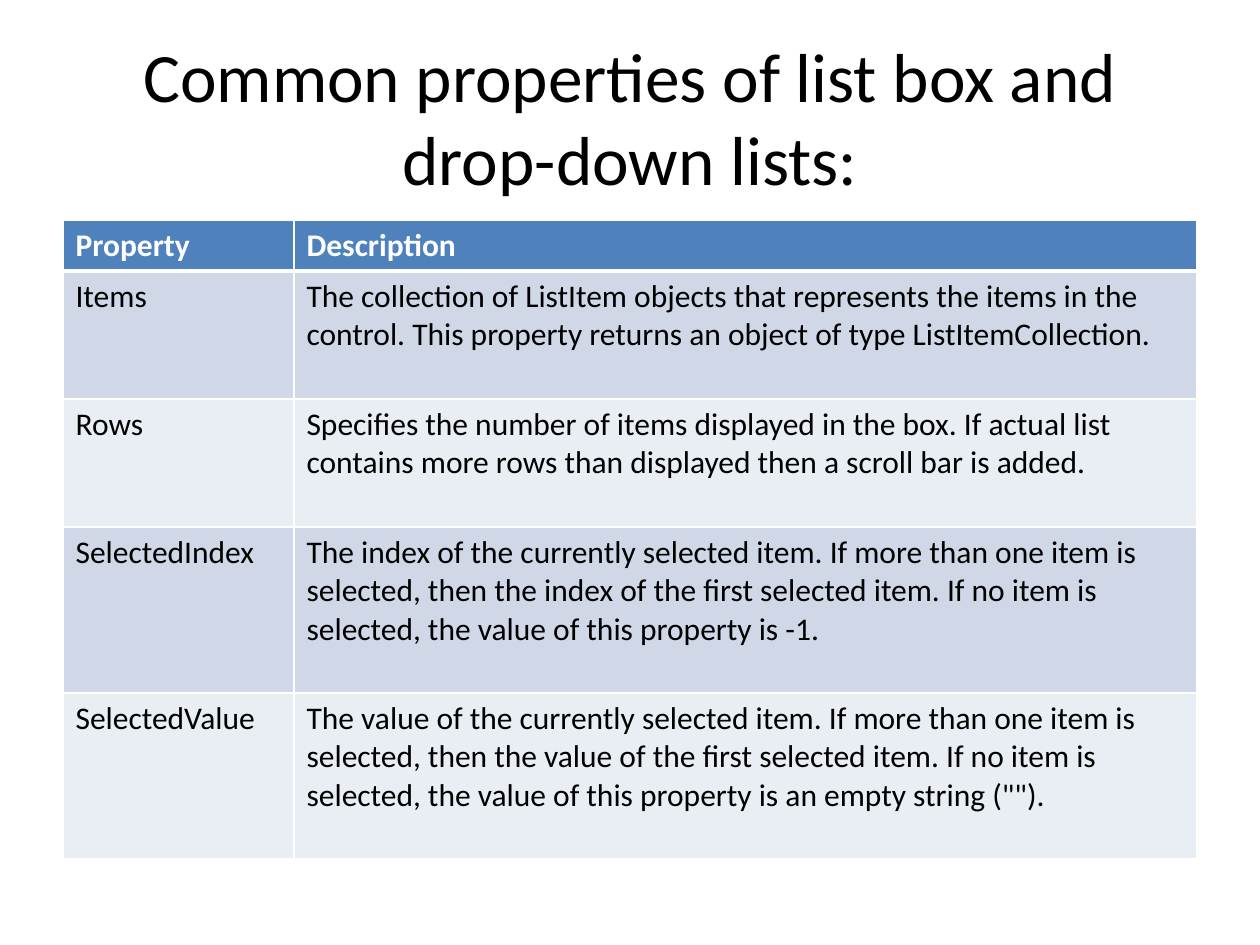
from lxml import etree
from pptx import Presentation
from pptx.dml.color import RGBColor
from pptx.enum.text import MSO_ANCHOR as ANCHOR, PP_ALIGN as ALIGN
from pptx.oxml.ns import qn
from pptx.util import Emu, Pt

SCALE = 914400 // 126


def px(n):
    return Emu(n * SCALE)


def rgb(value):
    return RGBColor.from_string(value)


class Deck:
    font = "Calibri"
    black, white, header = "000000", "FFFFFF", "4F81BD"
    bands = ("D0D8E8", "E9EDF4")

    def __init__(self, width, height):
        self.prs = Presentation()
        self.prs.slide_width, self.prs.slide_height = px(width), px(height)
        self.s = self.prs.slides.add_slide(self.prs.slide_layouts[6])

    def add_text(self, tf, text, size, color, bold=False, align=ALIGN.LEFT):
        p = tf.paragraphs[0]
        p.alignment = align
        r = p.add_run()
        r.text = text
        for key, value in dict(name=self.font, size=Pt(size), bold=bold).items():
            setattr(r.font, key, value)
        r.font.color.rgb = rgb(color)

    def title(self, text, box, size):
        tf = self.s.shapes.add_textbox(*map(px, box)).text_frame
        for key, value in dict(word_wrap=True, vertical_anchor=ANCHOR.MIDDLE).items():
            setattr(tf, key, value)
        self.add_text(tf, text, size, self.black, align=ALIGN.CENTER)

    def border(self, cell, widths):
        # Border lines must come before the fill in the cell properties
        tcPr = cell._tc.get_or_add_tcPr()
        for i, (side, width) in enumerate(widths.items()):
            ln = etree.Element(qn(f"a:ln{side}"), w=str(Pt(width)))
            fill = etree.SubElement(ln, qn("a:solidFill"))
            etree.SubElement(fill, qn("a:srgbClr"), val=self.white)
            tcPr.insert(i, ln)

    def table(self, rows, left, top, widths, heights, size):
        box = map(px, (left, top, sum(widths), sum(heights)))
        table = self.s.shapes.add_table(len(rows), len(widths), *box).table
        for column, width in zip(table.columns, widths):
            column.width = px(width)
        for i, (row, height) in enumerate(zip(rows, heights)):
            table.rows[i].height = px(height)
            head = i == 0
            fill = self.header if head else self.bands[(i - 1) % 2]
            color = self.white if head else self.black
            for j, text in enumerate(row):
                cell = table.cell(i, j)
                cell.fill.solid()
                cell.fill.fore_color.rgb = rgb(fill)
                self.border(cell, dict(L=1, R=1, T=3 if i == 1 else 1, B=3 if head else 1))
                self.add_text(cell.text_frame, text, size, color, bold=head)


deck = Deck(1260, 945)

# Title
deck.title("Common properties of list box and drop-down lists:", (63, 38, 1134, 157), 39.6)

# Property table
properties = [
    ("Property", "Description"),
    ("Items", "The collection of ListItem objects that represents the items in the control. "
              "This property returns an object of type ListItemCollection."),
    ("Rows", "Specifies the number of items displayed in the box. If actual list contains "
             "more rows than displayed then a scroll bar is added."),
    ("SelectedIndex", "The index of the currently selected item. If more than one item is "
                      "selected, then the index of the first selected item. If no item is "
                      "selected, the value of this property is -1."),
    ("SelectedValue", "The value of the currently selected item. If more than one item is "
                      "selected, then the value of the first selected item. If no item is "
                      "selected, the value of this property is an empty string (\"\")."),
]
deck.table(properties, 63, 220, (231, 903), (51, 128, 128, 166, 166), 18)

deck.prs.save("out.pptx")
